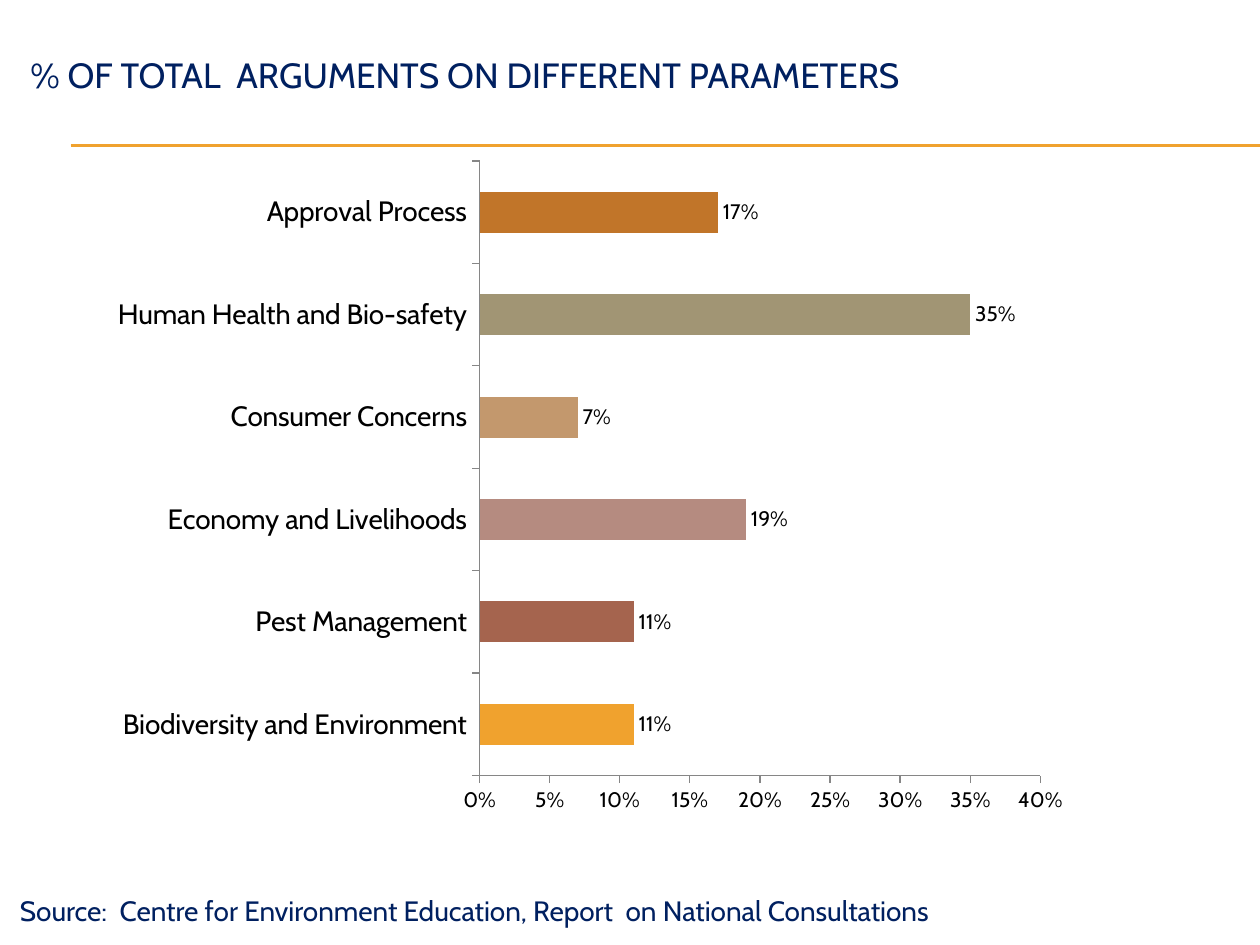
"""Build a slide with a bar chart of the share of arguments on each parameter."""
from typing import Any, NamedTuple

from pptx import Presentation
from pptx.chart.data import CategoryChartData
from pptx.dml.color import RGBColor
from pptx.enum.chart import XL_CHART_TYPE as ChartType
from pptx.enum.chart import XL_LABEL_POSITION as LabelPosition
from pptx.enum.chart import XL_TICK_MARK as TickMark
from pptx.enum.shapes import MSO_CONNECTOR as Connector
from pptx.enum.text import MSO_ANCHOR as Anchor
from pptx.enum.text import PP_ALIGN as Align
from pptx.oxml.xmlchemy import OxmlElement
from pptx.util import Inches, Pt

FONT = "Cabin"
COLORS = {
    "navy": "002060",
    "black": "000000",
    "axis": "868686",
    "amber": "F0A22E",
    "rust": "A5644E",
    "rose": "B58B80",
    "tan": "C3986D",
    "olive": "A19574",
    "copper": "C17529",
}


class Parameter(NamedTuple):
    label: str
    share: float
    color: str


class Rule(NamedTuple):
    left: float
    right: float
    top: float


PARAMETERS = [
    Parameter("Biodiversity and Environment", 0.11, "amber"),
    Parameter("Pest Management", 0.11, "rust"),
    Parameter("Economy and Livelihoods", 0.19, "rose"),
    Parameter("Consumer Concerns", 0.07, "tan"),
    Parameter("Human Health and Bio-safety", 0.35, "olive"),
    Parameter("Approval Process", 0.17, "copper"),
]
RULES = [Rule(0.56, 10, top) for top in (1.15, 1.16)]


def rgb(color: str) -> RGBColor:
    return RGBColor.from_string(COLORS[color])


def apply(target: Any, values: dict[str, Any]) -> None:
    for name, value in values.items():
        setattr(target, name, value)


def set_font(font: Any, size: int, color: str) -> None:
    apply(font, {"name": FONT, "size": Pt(size), "bold": False})
    font.color.rgb = rgb(color)


def place(shape: Any, left: float, top: float, width: float, height: float) -> None:
    box = {"left": left, "top": top, "width": width, "height": height}
    apply(shape, {side: Inches(length) for side, length in box.items()})


def write(shape: Any, wording: str, size: int, anchor: Anchor) -> None:
    apply(shape.text_frame, {"word_wrap": True, "vertical_anchor": anchor})
    paragraph = shape.text_frame.paragraphs[0]
    paragraph.alignment = Align.LEFT
    run = paragraph.add_run()
    run.text = wording
    set_font(run.font, size, "navy")


def draw_rule(slide: Any, rule: Rule) -> None:
    line = slide.shapes.add_connector(
        Connector.STRAIGHT,
        Inches(rule.left), Inches(rule.top), Inches(rule.right), Inches(rule.top),
    )
    line.line.width = Pt(0.75)
    line.line.color.rgb = rgb("amber")
    line._element.spPr.append(OxmlElement("a:effectLst"))


def format_axis(axis: Any, size: int) -> None:
    apply(axis, {
        "has_major_gridlines": False,
        "major_tick_mark": TickMark.OUTSIDE,
        "minor_tick_mark": TickMark.NONE,
    })
    axis.format.line.color.rgb = rgb("axis")
    set_font(axis.tick_labels.font, size, "black")


def draw_chart(slide: Any, parameters: list[Parameter]) -> None:
    shares = CategoryChartData(number_format="0%")
    shares.categories = [parameter.label for parameter in parameters]
    shares.add_series("Series 1", [parameter.share for parameter in parameters])
    chart = slide.shapes.add_chart(
        ChartType.BAR_CLUSTERED,
        Inches(0.78), Inches(1.17), Inches(7.81), Inches(5.39), shares,
    ).chart
    apply(chart, {"has_legend": False, "has_title": False})
    set_font(chart.font, 12, "black")

    format_axis(chart.category_axis, 16)
    format_axis(chart.value_axis, 12)
    apply(chart.value_axis, {
        "minimum_scale": 0, "maximum_scale": 0.4, "major_unit": 0.05,
    })
    percent = {"number_format": "0%", "number_format_is_linked": False}
    apply(chart.value_axis.tick_labels, percent)

    plot = chart.plots[0]
    apply(plot, {"gap_width": 150, "vary_by_categories": False, "has_data_labels": True})
    apply(plot.data_labels, percent | {
        "show_value": True, "position": LabelPosition.OUTSIDE_END,
    })
    set_font(plot.data_labels.font, 12, "black")
    for index, parameter in enumerate(parameters):
        fill = plot.series[0].points[index].format.fill
        fill.solid()
        fill.fore_color.rgb = rgb(parameter.color)


def main() -> None:
    deck = Presentation()
    apply(deck, {"slide_width": Inches(10), "slide_height": Inches(7.5)})
    slide = deck.slides.add_slide(deck.slide_layouts[5])

    for rule in RULES:
        draw_rule(slide, rule)
    draw_chart(slide, PARAMETERS)

    title = slide.shapes.title
    place(title, 0.14, 0.16, 9, 0.86)
    write(title, "% OF TOTAL  ARGUMENTS ON DIFFERENT PARAMETERS", 20, Anchor.MIDDLE)

    source = slide.shapes.add_textbox(0, 0, 0, 0)
    place(source, 0.06, 7.04, 9.13, 0.37)
    write(
        source,
        "Source:  Centre for Environment Education, Report  on National Consultations",
        16, Anchor.TOP,
    )
    deck.save("out.pptx")


if __name__ == "__main__":
    main()
